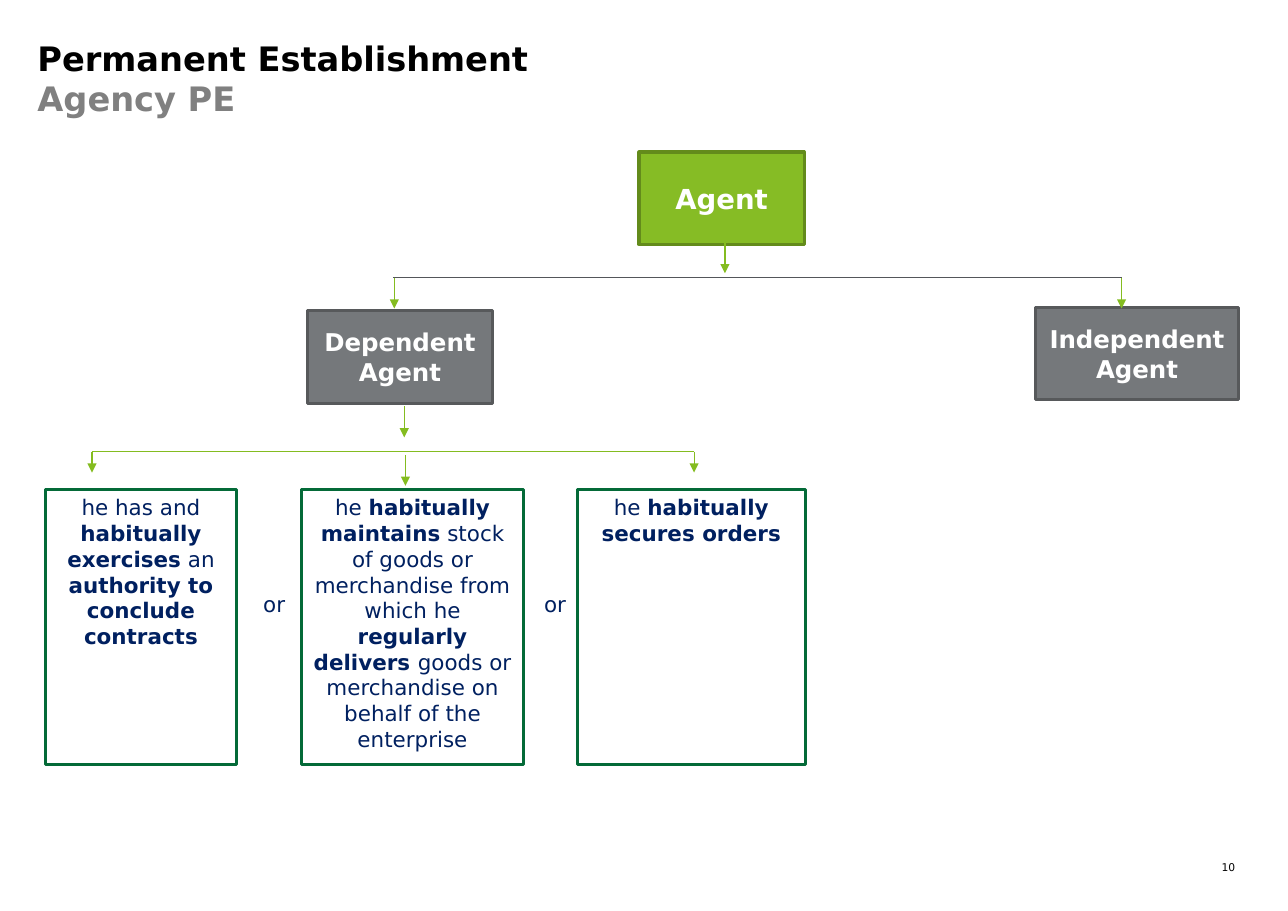
from lxml import etree
from pptx import Presentation
from pptx.dml.color import RGBColor
from pptx.enum.shapes import MSO_CONNECTOR, MSO_SHAPE
from pptx.enum.text import MSO_ANCHOR, MSO_AUTO_SIZE, PP_ALIGN
from pptx.oxml.ns import qn
from pptx.util import Inches, Pt

LEFT, CENTER, RIGHT = PP_ALIGN.LEFT, PP_ALIGN.CENTER, PP_ALIGN.RIGHT
TOP, MIDDLE = MSO_ANCHOR.TOP, MSO_ANCHOR.MIDDLE
RECTANGLE, STRAIGHT = MSO_SHAPE.RECTANGLE, MSO_CONNECTOR.STRAIGHT
NO_FIT = MSO_AUTO_SIZE.NONE
hex_color = RGBColor.from_string

deck = Presentation()
deck.slide_width, deck.slide_height = Inches(11.69), Inches(8.27)
page = deck.slides.add_slide(deck.slide_layouts[5])

# The page is a grid of 100 columns by 100 rows
COLUMN, ROW = deck.slide_width / 100, deck.slide_height / 100


def write(box, text, size, color, align=CENTER, anchor=TOP, inset=None):
    """Write text in a box; parts between asterisks are bold."""
    frame = box.text_frame
    settings = {"word_wrap": True, "auto_size": NO_FIT, "vertical_anchor": anchor}
    if inset is not None:
        settings |= {f"margin_{side}": inset for side in ("left", "top", "right", "bottom")}
    for name, value in settings.items():
        setattr(frame, name, value)
    para = frame.paragraphs[0]
    para.alignment = align
    for index, part in enumerate(text.split("*")):
        if part:
            span = para.add_run()
            span.text = part
            look = {"name": "DejaVu Sans", "size": Pt(size), "bold": index % 2 == 1}
            for name, value in look.items():
                setattr(span.font, name, value)
            span.font.color.rgb = hex_color(color)
    return para


def connect(left, top, right, bottom, color, arrow=False):
    """Draw a thin straight line, with an arrowhead at its end if asked."""
    line = page.shapes.add_connector(
        STRAIGHT, *(int(v) for v in (left * COLUMN, top * ROW, right * COLUMN, bottom * ROW)))
    line.line.color.rgb = hex_color(color)
    line.line.width = Pt(0.75)
    if arrow:
        etree.SubElement(line.line._get_or_add_ln(), qn("a:tailEnd"), type="triangle")
    etree.SubElement(line._element.spPr, qn("a:effectLst"))


# Title in two colours
title = page.shapes.title
place = {"left": 2.91 * COLUMN, "top": 4.11 * ROW, "width": 94.53 * COLUMN, "height": 9.55 * ROW}
for name, value in place.items():
    setattr(title, name, int(value))
heading = write(title, "*Permanent Establishment**Agency PE*", 22, "000000", LEFT, inset=0)
heading.runs[0].text = "Permanent Establishment\v"
heading.runs[0].text = "Permanent Establishment"
heading.runs[1].font.color.rgb = hex_color("808080")
line_break = etree.Element(qn("a:br"))
etree.SubElement(line_break, qn("a:rPr"), sz="2200")
heading.runs[0]._r.addnext(line_break)

# Agents and the three conditions
AGENT = ("86BC25", "638B1B", "FFFFFF", MIDDLE)
KIND = ("75787B", "57595B", "FFFFFF", MIDDLE)
CONDITION = ("FFFFFF", "046A38", "002060", TOP)
boxes = [
    (49.62, 16.69, 12.83, 10.16, AGENT, 18, "*Agent*"),
    (23.87, 34.1, 14.37, 10.16, KIND, 16, "*Dependent Agent*"),
    (80.41, 33.74, 15.74, 10.16, KIND, 16, "*Independent Agent*"),
    (3.51, 53.69, 14.88, 30.23, CONDITION, 14,
     "he has and *habitually exercises* an *authority to conclude contracts*"),
    (23.44, 53.69, 17.19, 30.23, CONDITION, 14,
     "he *habitually maintains* stock of goods or merchandise from which he "
     "*regularly delivers *goods or merchandise on behalf of the enterprise"),
    (44.82, 53.69, 17.71, 30.23, CONDITION, 14, "he *habitually secures orders*"),
]
for left, top, width, height, (fill, edge, ink, anchor), size, text in boxes:
    box = page.shapes.add_shape(RECTANGLE, int(left * COLUMN), int(top * ROW),
                                int(width * COLUMN), int(height * ROW))
    box.shadow.inherit = False
    box.fill.solid()
    box.fill.fore_color.rgb = hex_color(fill)
    box.line.color.rgb = hex_color(edge)
    box.line.width = Pt(2)
    write(box, text, size, ink, anchor=anchor)

# "or" between the conditions, and the page number
labels = [
    (19.59, 64.33, 4.28, 4.11, "or", 14, "002060", LEFT, None),
    (41.4, 64.33, 3.68, 4.11, "or", 14, "002060", LEFT, None),
    (93.33, 94.44, 2.57, 1.45, "10", 7, "000000", RIGHT, 0),
]
for left, top, width, height, text, size, ink, align, inset in labels:
    label = page.shapes.add_textbox(int(left * COLUMN), int(top * ROW),
                                    int(width * COLUMN), int(height * ROW))
    write(label, text, size, ink, align, inset=inset)

# Branch lines
AGENT_BRANCH, CONDITION_BRANCH = 30.47, 49.58
connect(30.54, AGENT_BRANCH, 87.08, AGENT_BRANCH, "53565A")
connect(7.14, CONDITION_BRANCH, 53.89, CONDITION_BRANCH, "84BC20")

# Arrows down: column, row, length in rows
LONG, SHORT = 3.39, 2.3
arrows = [
    (56.29, 26.6, LONG), (30.62, AGENT_BRANCH, LONG), (87.08, AGENT_BRANCH, LONG),
    (31.39, 44.62, LONG), (31.48, 49.94, LONG),
    (7.14, CONDITION_BRANCH, SHORT), (53.89, CONDITION_BRANCH, SHORT),
]
for column, row, length in arrows:
    connect(column, row, column, row + length, "84BC20", arrow=True)

deck.save("out.pptx")
